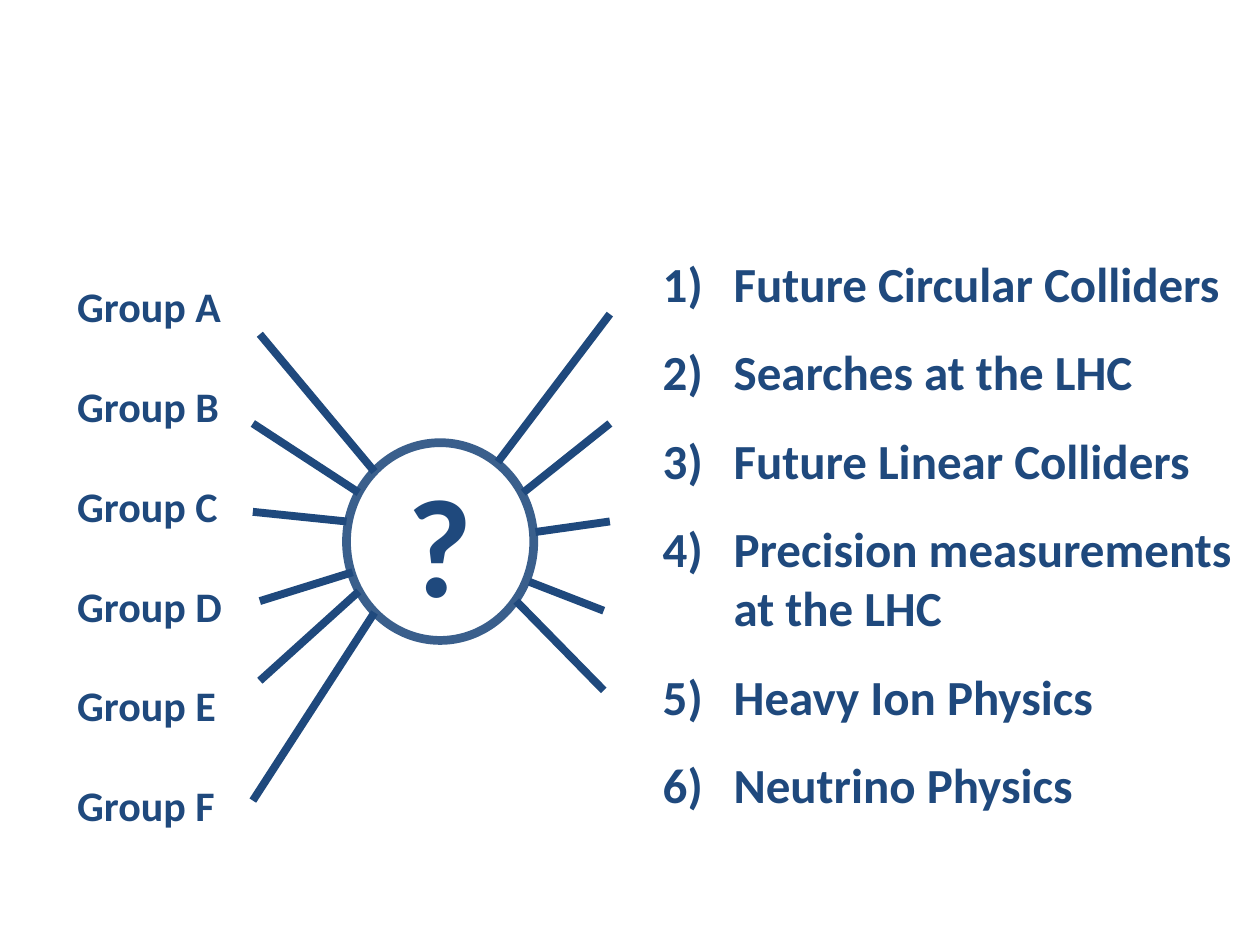
"""Build the slide that matches six groups with six physics topics."""
from lxml.etree import SubElement
from pptx import Presentation
from pptx.dml.color import RGBColor
from pptx.enum.shapes import MSO_CONNECTOR as Connector, MSO_SHAPE as Shape
from pptx.enum.text import MSO_ANCHOR as Anchor, MSO_AUTO_SIZE as AutoSize, PP_ALIGN as Align
from pptx.oxml.ns import qn
from pptx.util import Pt

GROUPS = [f"Group {letter}" for letter in "ABCDEF"]
TOPICS = [
    "Future Circular Colliders",
    "Searches at the LHC",
    "Future Linear Colliders",
    "Precision measurements at the LHC",
    "Heavy Ion Physics",
    "Neutrino Physics",
]
GROUP_SPOKES = [
    (148.5, 191, 214, 269.5),
    (144.5, 242, 205, 281.5),
    (144.5, 292.5, 198, 298),
    (148.5, 343.5, 201.5, 327),
    (148.5, 389, 205, 338),
    (144.5, 457.5, 214, 350),
]
TOPIC_SPOKES = [
    (348.5, 179.5, 284.5, 264),
    (348.5, 242, 299, 281.5),
    (348.5, 298, 306, 304),
    (345, 349, 302.5, 332.5),
    (345, 394.5, 295, 343.5),
]


def color(value):
    return RGBColor.from_string(value)


class SlideBuilder:
    font = "Calibri"
    ink = "1F497D"
    ring = "3A5F8C"

    def __init__(self, slide):
        self.slide = slide

    def styled_run(self, paragraph, text, size):
        run = paragraph.add_run()
        run.text = text
        run.font.name = self.font
        run.font.size = Pt(size)
        run.font.bold = True
        run.font.color.rgb = color(self.ink)

    def paragraphs(self, frame, count, gap):
        for index in range(count):
            paragraph = frame.add_paragraph() if index else frame.paragraphs[0]
            paragraph.space_before = Pt(gap if index else 0)
            yield paragraph

    def labels(self, box, names, size, gap):
        frame = self.slide.shapes.add_textbox(*map(Pt, box)).text_frame
        frame.word_wrap = False
        for paragraph, name in zip(self.paragraphs(frame, len(names), gap), names):
            self.styled_run(paragraph, name, size)

    def numbered_list(self, box, entries, size, gap, indent):
        body = self.slide.placeholders[1]
        body.left, body.top, body.width, body.height = map(Pt, box)
        frame = body.text_frame
        frame.auto_size = AutoSize.NONE
        for paragraph, entry in zip(self.paragraphs(frame, len(entries), gap), entries):
            properties = paragraph._p.get_or_add_pPr()
            properties.set("marL", str(Pt(indent)))
            properties.set("indent", str(-Pt(indent)))
            SubElement(properties, qn("a:buFont"), typeface="+mj-lt")
            SubElement(properties, qn("a:buAutoNum"), type="arabicParenR")
            self.styled_run(paragraph, entry, size)

    def circle(self, box, text, size):
        hub = self.slide.shapes.add_shape(Shape.OVAL, *map(Pt, box))
        hub.shadow.inherit = False
        hub.fill.background()
        hub.line.color.rgb = color(self.ring)
        hub.line.width = Pt(5)
        frame = hub.text_frame
        frame.vertical_anchor = Anchor.MIDDLE
        frame.paragraphs[0].alignment = Align.CENTER
        self.styled_run(frame.paragraphs[0], text, size)

    def spoke(self, ends):
        line = self.slide.shapes.add_connector(Connector.STRAIGHT, *map(Pt, ends))
        line.line.color.rgb = color(self.ink)
        line.line.width = Pt(4.5)
        SubElement(line._element.spPr, qn("a:effectLst"))


def main():
    deck = Presentation()
    deck.slide_width, deck.slide_height = Pt(720), Pt(540)
    slide = deck.slides.add_slide(deck.slide_layouts[1])
    title = slide.shapes.title._element
    title.getparent().remove(title)

    builder = SlideBuilder(slide)
    builder.labels((37, 157, 98, 385), GROUPS, size=24, gap=28.2)
    builder.circle((198, 253, 107, 113), "?", size=80)
    for ends in GROUP_SPOKES + TOPIC_SPOKES:
        builder.spoke(ends)
    builder.numbered_list((371.5, 141, 348.5, 379), TOPICS, size=28, gap=17, indent=40.5)
    deck.save("out.pptx")


if __name__ == "__main__":
    main()
